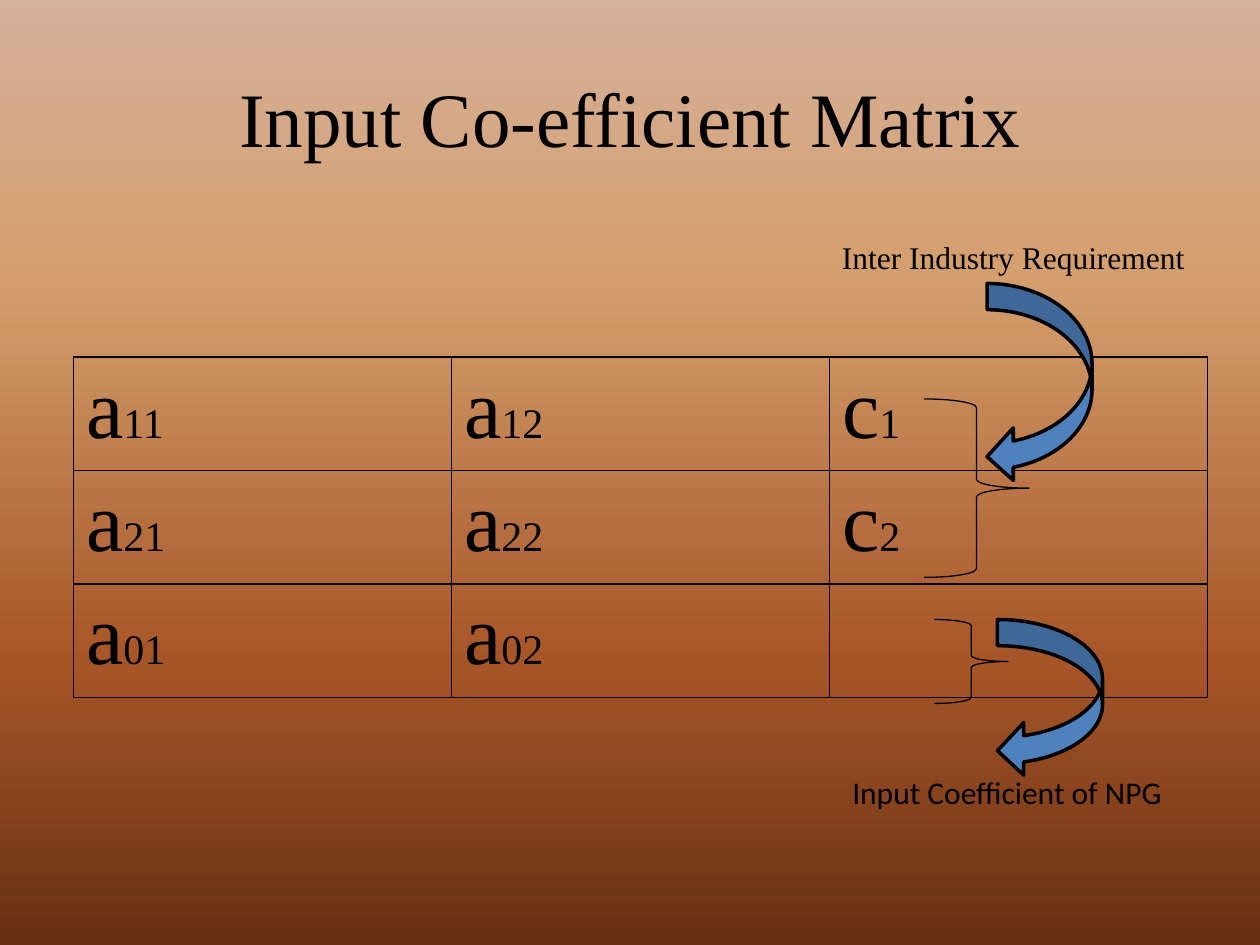
from lxml import etree
from pptx import Presentation
from pptx import util as u
from pptx.dml.color import RGBColor
from pptx.enum import shapes, text
from pptx.oxml import ns

Pt = u.Pt
BLACK = RGBColor(0x00, 0x00, 0x00)
BLUE = RGBColor(0x4F, 0x81, 0xBD)
SKY = [
    (0, RGBColor(0xD6, 0xB1, 0x9C)),
    (30, RGBColor(0xD4, 0x9E, 0x6C)),
    (70, RGBColor(0xA6, 0x55, 0x28)),
    (100, RGBColor(0x66, 0x30, 0x12)),
]
SERIF = "Times New Roman"
SANS = "Calibri"
MATRIX = [
    [("a", "11"), ("a", "12"), ("c", "1")],
    [("a", "21"), ("a", "22"), ("c", "2")],
    [("a", "01"), ("a", "02"), None],
]


def add(node, tag, **attrs):
    return etree.SubElement(node, ns.qn(tag), attrs)


class Page:
    """The current slide and its style."""

    def __init__(self, deck):
        self.slide = deck.slides.add_slide(deck.slide_layouts[6])
        self.items = self.slide.shapes
        self.ink = BLACK

    def back(self, stops):
        """Fill the background from top to bottom with colour stops."""
        fill = self.slide.background.fill
        fill.gradient()
        fill.gradient_angle = 270
        node = self.slide.element.find(".//" + ns.qn("a:gsLst"))
        node.clear()
        for spot, color in stops:
            stop = add(node, "a:gs", pos=str(spot * 1000))
            add(stop, "a:srgbClr", val=str(color))

    def font(self, font, size, face=SERIF):
        font.size, font.name = Pt(size), face
        font.color.rgb = self.ink

    def label(self, words, box, size=18, face=SERIF, align=text.PP_ALIGN.LEFT):
        frame = self.items.add_textbox(*map(Pt, box)).text_frame
        frame.word_wrap = True
        frame.vertical_anchor = text.MSO_ANCHOR.MIDDLE
        para = frame.paragraphs[0]
        para.text, para.alignment = words, align
        self.font(para.font, size, face)

    def shape(self, kind, box, width, color=None):
        item = self.items.add_shape(kind, *map(Pt, box))
        item.shadow.inherit = False
        item.line.color.rgb = self.ink
        item.line.width = Pt(width)
        if color is None:
            item.fill.background()
        else:
            item.fill.solid()
            item.fill.fore_color.rgb = color

    def brace(self, *box):
        self.shape(shapes.MSO_SHAPE.RIGHT_BRACE, box, 0.75)

    def arrow(self, *box):
        self.shape(shapes.MSO_SHAPE.CURVED_LEFT_ARROW, box, 2, BLUE)

    def border(self, cell, width=1):
        props = cell._tc.get_or_add_tcPr()
        for side in "LRTB":
            line = add(props, f"a:ln{side}", w=str(Pt(width)))
            add(add(line, "a:solidFill"), "a:srgbClr", val=str(self.ink))

    def table(self, rows, left, top, wide, high):
        """Draw a grid of letters, each with a small index."""
        count = len(rows[0])
        grid = self.items.add_table(
            len(rows), count, Pt(left), Pt(top),
            Pt(wide * count), Pt(high * len(rows))).table
        for r, row in enumerate(rows):
            for c, entry in enumerate(row):
                cell = grid.cell(r, c)
                self.border(cell)
                cell.fill.background()
                para = cell.text_frame.paragraphs[0]
                for part, size in zip(entry or (), (48, 24)):
                    run = para.add_run()
                    run.text = part
                    self.font(run.font, size)


def main():
    deck = Presentation()
    deck.slide_width, deck.slide_height = Pt(720), Pt(540)
    page = Page(deck)
    page.back(SKY)
    page.label("Input Co-efficient Matrix", (36, 21.6, 648, 90), 44,
               align=text.PP_ALIGN.CENTER)
    page.table(MATRIX, 42, 204, 216, 60.4)
    page.label("Inter Industry Requirement", (474, 132, 216, 29))
    page.brace(528, 228, 60, 102)
    page.arrow(564, 162, 60, 114)
    page.label("Input Coefficient of NPG", (480, 438, 210, 29), face=SANS)
    page.brace(534, 354, 42, 48)
    page.arrow(570, 354, 60, 90)
    deck.save("out.pptx")


if __name__ == "__main__":
    main()
